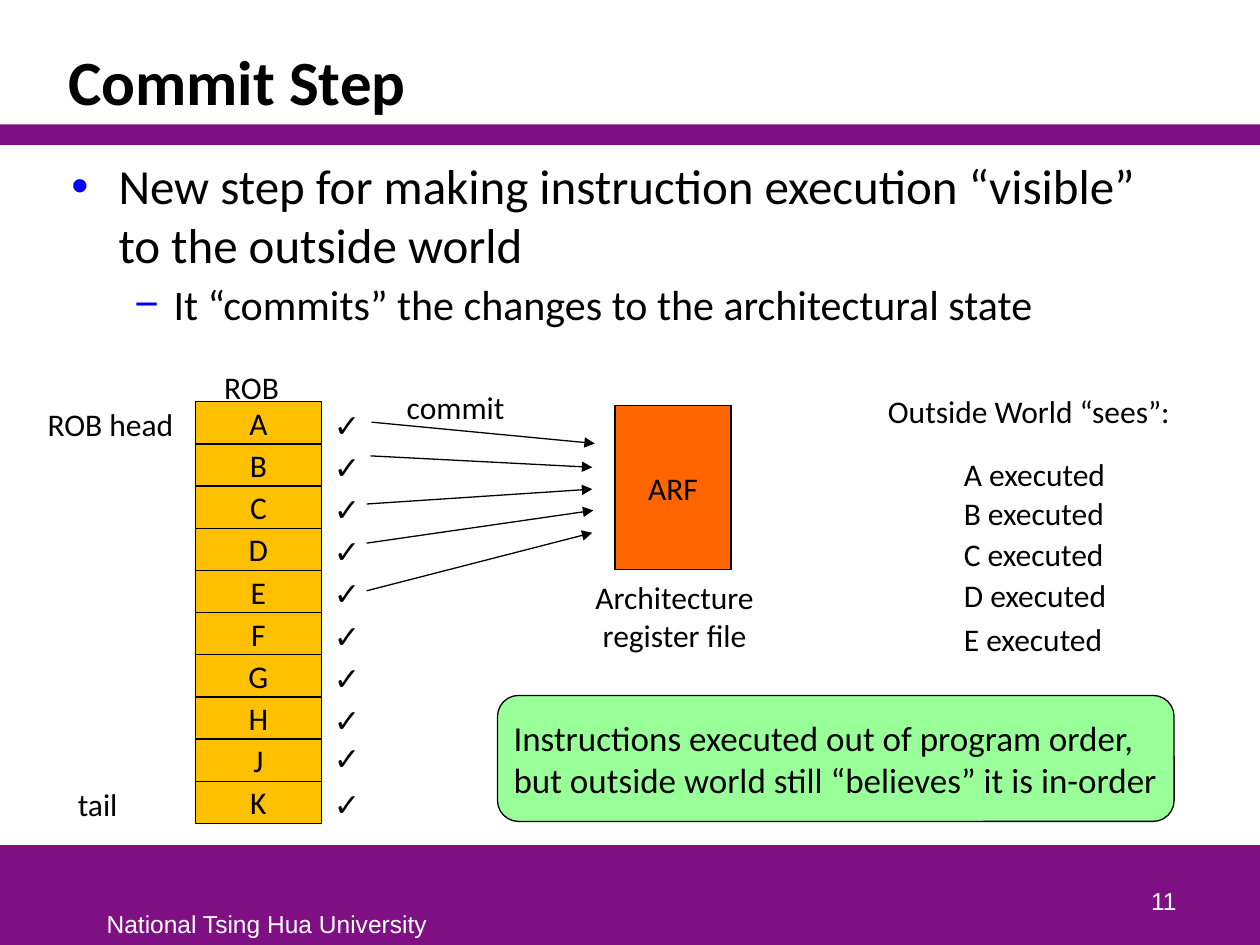
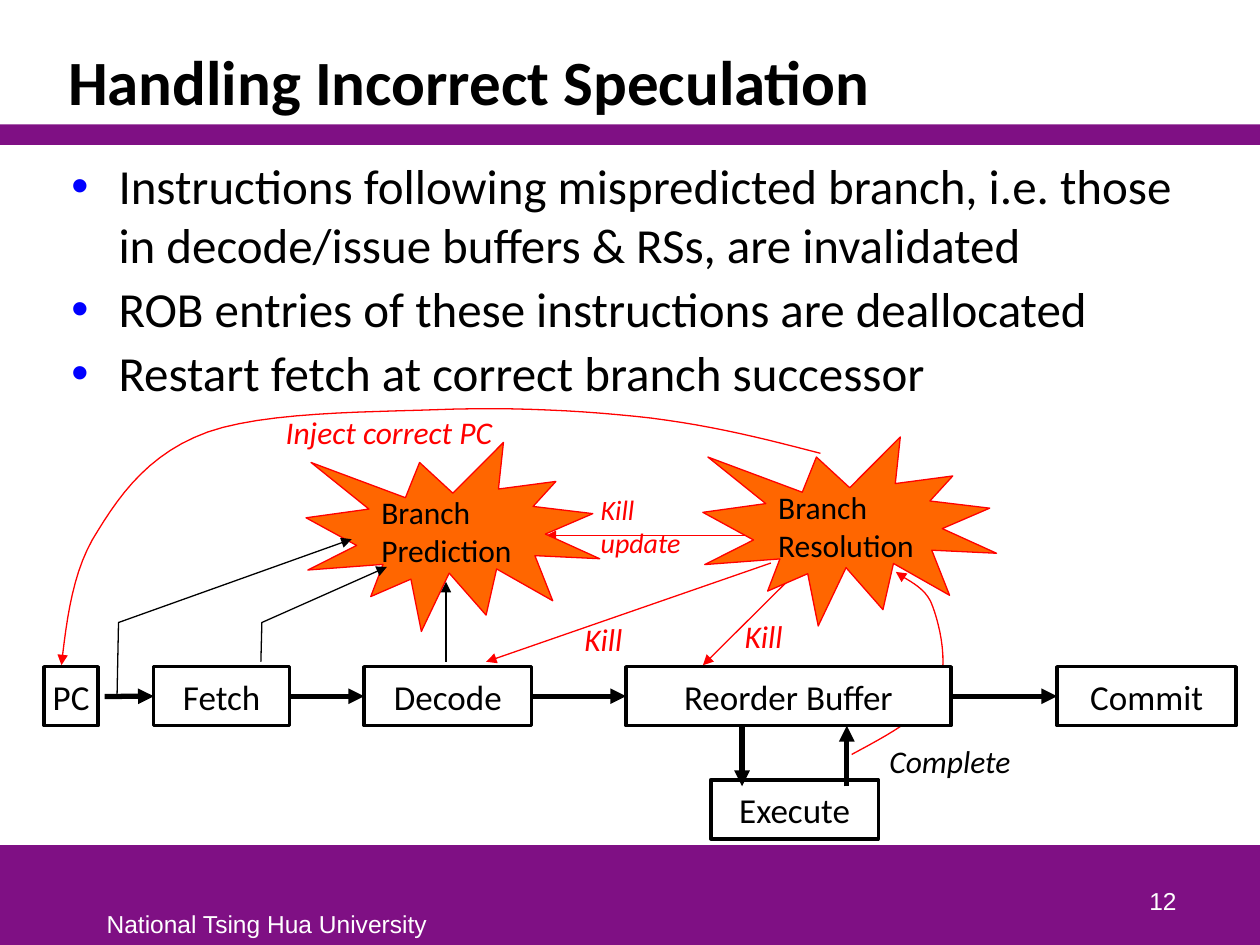
from lxml import etree
from pptx import Presentation
from pptx.dml.color import RGBColor
from pptx.enum.shapes import MSO_CONNECTOR, MSO_SHAPE
from pptx.enum.text import MSO_ANCHOR, MSO_AUTO_SIZE, PP_ALIGN
from pptx.oxml.ns import qn
from pptx.util import Cm, Pt

PURPLE = RGBColor(0x7F, 0x10, 0x84)
BLACK = RGBColor(0, 0, 0)
WHITE = RGBColor(0xFF, 0xFF, 0xFF)
RED = RGBColor(0xFF, 0, 0)
AMBER = RGBColor(0xFF, 0xC0, 0)
ORANGE = RGBColor(0xFF, 0x66, 0)
GREEN = RGBColor(0x99, 0xFF, 0x99)
BULLET_BLUE = "0000FF"

LEFT, CENTER, RIGHT = PP_ALIGN.LEFT, PP_ALIGN.CENTER, PP_ALIGN.RIGHT
TOP, MIDDLE, BOTTOM = MSO_ANCHOR.TOP, MSO_ANCHOR.MIDDLE, MSO_ANCHOR.BOTTOM
RECTANGLE, ROUNDED = MSO_SHAPE.RECTANGLE, MSO_SHAPE.ROUNDED_RECTANGLE
BURST = MSO_SHAPE.EXPLOSION1
STRAIGHT = MSO_CONNECTOR.STRAIGHT
FIT_TEXT, NO_FIT = MSO_AUTO_SIZE.SHAPE_TO_FIT_TEXT, MSO_AUTO_SIZE.NONE


def add_box(page, text, left, top, width, height=1.02, preset=None, fill=None,
            line=BLACK, weight=0.75, size=18, color=BLACK, font="Calibri",
            italic=False, align=LEFT, anchor=TOP, wrap=False):
    """Add a text box, or a filled shape when a preset is given."""
    place = Cm(left), Cm(top), Cm(width), Cm(height)
    if preset is None:
        box = page.shapes.add_textbox(*place)
    else:
        box = page.shapes.add_shape(preset, *place)
        box.shadow.inherit = False
        box.fill.solid()
        box.fill.fore_color.rgb = fill
        if line is None:
            box.line.fill.background()
        else:
            box.line.color.rgb = line
            box.line.width = Pt(weight)
    frame = box.text_frame
    frame.text = text
    frame.word_wrap = wrap
    frame.vertical_anchor = anchor
    frame.auto_size = FIT_TEXT if preset is None and anchor == TOP else NO_FIT
    for paragraph in frame.paragraphs:
        paragraph.alignment = align
        paragraph.font.name = font
        paragraph.font.size = Pt(size)
        paragraph.font.italic = italic
        paragraph.font.color.rgb = color
    return box


def make_arrow(stroke, color=BLACK, weight=0.75):
    """Style a connector or open outline as an arrow without a shadow."""
    stroke.line.color.rgb = color
    stroke.line.width = Pt(weight)
    properties = stroke.element.spPr
    etree.SubElement(properties.find(qn("a:ln")), qn("a:tailEnd"), type="triangle")
    etree.SubElement(properties, qn("a:effectLst"))


deck = Presentation()
deck.slide_width, deck.slide_height = Cm(25.4), Cm(19.05)

# Shared frame: title, bands, footer, number and bullets
contents = [
    (11, "Commit Step", [
        (0, "New step for making instruction execution “visible” to the outside world"),
        (1, "It “commits” the changes to the architectural state"),
    ]),
    (12, "Handling Incorrect Speculation", [
        (0, "Instructions following mispredicted branch, i.e. those in "
            "decode/issue buffers & RSs, are invalidated"),
        (0, "ROB entries of these instructions are deallocated"),
        (0, "Restart fetch at correct branch successor"),
    ]),
]
# Per level: left margin, hanging indent, bullet, text size
levels = [(0.95, -0.95, "•", 28), (2.06, -0.79, "−", 24)]

pages = []
for number, heading, bullets in contents:
    page = deck.slides.add_slide(deck.slide_layouts[5])
    pages.append(page)

    title = page.shapes.title
    title.left, title.top, title.width, title.height = Cm(1.12), Cm(0.63), Cm(22.78), Cm(1.88)
    title.text_frame.text = heading
    title.text_frame.vertical_anchor = BOTTOM
    title.text_frame.auto_size = NO_FIT
    paragraph = title.text_frame.paragraphs[0]
    paragraph.alignment = LEFT
    paragraph.line_spacing = 0.85
    paragraph.font.name = "Calibri"
    paragraph.font.size = Pt(36)
    paragraph.font.bold = True
    paragraph.font.color.rgb = BLACK

    for top, height in [(17.04, 2.01), (2.51, 0.41)]:
        add_box(page, "", 0, top, 25.4, height, RECTANGLE, PURPLE, None)
    add_box(page, "National Tsing Hua University", 1.9, 18.21, 7.01, 0.84,
            size=14, color=WHITE, font="Arial")
    add_box(page, str(number), 18.69, 17.3, 5.28, 1.27, size=14, color=WHITE,
            font="Arial", align=RIGHT, anchor=BOTTOM, wrap=True)

    body = page.shapes.add_textbox(Cm(1.19), Cm(3.02), Cm(22.71), Cm(13.69)).text_frame
    body.word_wrap = True
    for index, (level, text) in enumerate(bullets):
        margin, indent, mark, size = levels[level]
        paragraph = body.add_paragraph() if index else body.paragraphs[0]
        paragraph.text = text
        paragraph.level = level
        if index:
            paragraph.space_before = Pt(3)
        properties = paragraph._p.get_or_add_pPr()
        properties.set("marL", str(Cm(margin)))
        properties.set("indent", str(Cm(indent)))
        bullet_color = etree.SubElement(properties, qn("a:buClr"))
        etree.SubElement(bullet_color, qn("a:srgbClr"), val=BULLET_BLUE)
        etree.SubElement(properties, qn("a:buFont"), typeface="Arial")
        etree.SubElement(properties, qn("a:buChar"), char=mark)
        paragraph.font.name = "Calibri"
        paragraph.font.size = Pt(size)
        paragraph.font.color.rgb = BLACK

commit_page, speculation_page = pages

# Commit Step: reorder buffer entries with check marks
entry_height = 0.85
for row, entry in enumerate("ABCDEFGHJK"):
    top = 8.1 + row * entry_height
    add_box(commit_page, entry, 3.94, top, 2.54, entry_height, RECTANGLE, AMBER,
            align=CENTER, anchor=MIDDLE)
    check_top = top if entry == "J" else top + 0.08
    check = add_box(commit_page, "✓", 6.48, check_top, 1.02, 0.76, wrap=True)
    check.text_frame.margin_top = check.text_frame.margin_bottom = 0

# Commit Step: register file and commit arrows
add_box(commit_page, "ARF", 12.4, 8.18, 2.34, 3.3, RECTANGLE, ORANGE,
        align=CENTER, anchor=MIDDLE)
commit_arrows = [
    (7.49, 8.51, 11.99, 8.94),
    (7.47, 9.19, 11.94, 9.42),
    (7.39, 10.16, 11.94, 9.86),
    (7.39, 10.95, 11.96, 10.29),
    (7.39, 11.91, 11.94, 10.74),
]
for ends in commit_arrows:
    make_arrow(commit_page.shapes.add_connector(STRAIGHT, *map(Cm, ends)))

# Commit Step: labels
for text, left, top, width in [
    ("ROB", 4.27, 7.29, 1.63),
    ("ROB head", 0.71, 8.05, 3.07),
    ("tail", 1.32, 15.7, 1.32),
    ("commit", 7.95, 7.7, 2.57),
    ("Outside World “sees”:", 17.65, 7.77, 6.25),
]:
    add_box(commit_page, text, left, top, width)
add_box(commit_page, "Architecture register file", 11.1, 11.53, 5, 1.8,
        align=CENTER, wrap=True)
for entry, top in zip("ABCDE", [9.04, 9.83, 10.67, 11.48, 12.37]):
    add_box(commit_page, f"{entry} executed", 19.18, top, 3.4)

note = add_box(commit_page, "Instructions executed out of program order,\n"
               "but outside world still “believes” it is in-order",
               10.03, 14.02, 13.64, 2.54, ROUNDED, GREEN, size=20, anchor=MIDDLE)
note.text_frame.margin_left = note.text_frame.margin_right = Cm(0.2)

# Speculation: kill signals and their labels
for ends in [
    (15.88, 11.71, 14.17, 13.41),
    (15.54, 11.35, 9.8, 13.34),
    (15.09, 10.8, 11, 10.8),
]:
    make_arrow(speculation_page.shapes.add_connector(STRAIGHT, *map(Cm, ends)), RED)
for text, left, top, width, height, size, color in [
    ("Kill\nupdate", 11.86, 9.8, 2.13, 1.63, 16, RED),
    ("Kill", 11.53, 12.37, 1.3, 1.02, 18, RED),
    ("Kill", 14.76, 12.32, 1.3, 1.02, 18, RED),
    ("Inject correct PC", 5.51, 8.2, 4.72, 1.02, 18, RED),
    ("Complete", 17.68, 14.83, 2.97, 1.02, 18, BLACK),
]:
    add_box(speculation_page, text, left, top, width, height, size=size,
            color=color, italic=True)

# Speculation: branch units
for text, left, top in [("Branch\nResolution", 14.17, 8.81),
                        ("Branch\nPrediction", 6.17, 8.92)]:
    add_box(speculation_page, text, left, top, 5.92, 3.81, BURST, ORANGE, RED,
            anchor=MIDDLE)

# Speculation: curved signals, each a start point and cubic segments
inject_curve = [
    (16.54, 9.14),
    (15.47, 8.86), (14.4, 8.59), (13.13, 8.43),
    (11.84, 8.28), (10.31, 8.2), (8.81, 8.26),
    (7.34, 8.31), (5.33, 8.31), (4.19, 8.71),
    (3.05, 9.12), (2.46, 9.91), (1.98, 10.69),
    (1.47, 11.46), (1.35, 12.45), (1.24, 13.41),
]
complete_curve = [
    (17.17, 15.21),
    (17.88, 14.83), (18.59, 14.45), (18.87, 13.97),
    (19.15, 13.46), (18.95, 12.62), (18.8, 12.22),
    (18.67, 11.81), (18.19, 11.66), (18.06, 11.53),
]
steps = 12
signals = []
for curve in (inject_curve, complete_curve):
    points = [curve[0]]
    for first in range(0, len(curve) - 1, 3):
        controls = curve[first:first + 4]
        for step in range(1, steps + 1):
            t = step / steps
            weights = ((1 - t) ** 3, 3 * t * (1 - t) ** 2, 3 * t ** 2 * (1 - t), t ** 3)
            points.append(tuple(sum(w * point[axis] for w, point in zip(weights, controls))
                                for axis in (0, 1)))
    signals.append((points, RED))

# Speculation: bent lookups into branch prediction
signals.append(([(5.26, 13.34), (5.28, 12.55), (7.8, 11.43)], BLACK))
signals.append(([(2.36, 14.05), (2.39, 12.55), (7.09, 10.87)], BLACK))
for points, color in signals:
    corners = [(Cm(x), Cm(y)) for x, y in points]
    builder = speculation_page.shapes.build_freeform(*corners[0])
    builder.add_line_segments(corners[1:], close=False)
    signal = builder.convert_to_shape()
    signal.fill.background()
    make_arrow(signal, color)
make_arrow(speculation_page.shapes.add_connector(
    STRAIGHT, Cm(8.99), Cm(13.34), Cm(8.99), Cm(11.73)))

# Speculation: pipeline stages
stages = {}
for name, left, top, width in [
    ("PC", 0.89, 13.44, 1.09),
    ("Fetch", 3.1, 13.44, 2.74),
    ("Decode", 7.34, 13.44, 3.38),
    ("Reorder Buffer", 12.62, 13.44, 6.55),
    ("Commit", 21.31, 13.44, 3.61),
    ("Execute", 14.33, 15.72, 3.38),
]:
    stages[name] = add_box(speculation_page, name, left, top, width, 1.19, RECTANGLE,
                           WHITE, weight=2, size=20, align=CENTER, anchor=MIDDLE)

# Speculation: pipeline flow
flow = ["Fetch", "Decode", "Reorder Buffer", "Commit"]
for source, target in zip([None] + flow, flow):
    arrow = speculation_page.shapes.add_connector(
        STRAIGHT, Cm(2.11), Cm(14.04), Cm(3.1), Cm(14.04))
    if source:
        arrow.begin_connect(stages[source], 3)
    arrow.end_connect(stages[target], 1)
    make_arrow(arrow, weight=3)
for ends in [(14.96, 14.63, 14.96, 15.85), (17.07, 15.85, 17.07, 14.63)]:
    make_arrow(speculation_page.shapes.add_connector(STRAIGHT, *map(Cm, ends)), weight=3)

deck.save("out.pptx")
